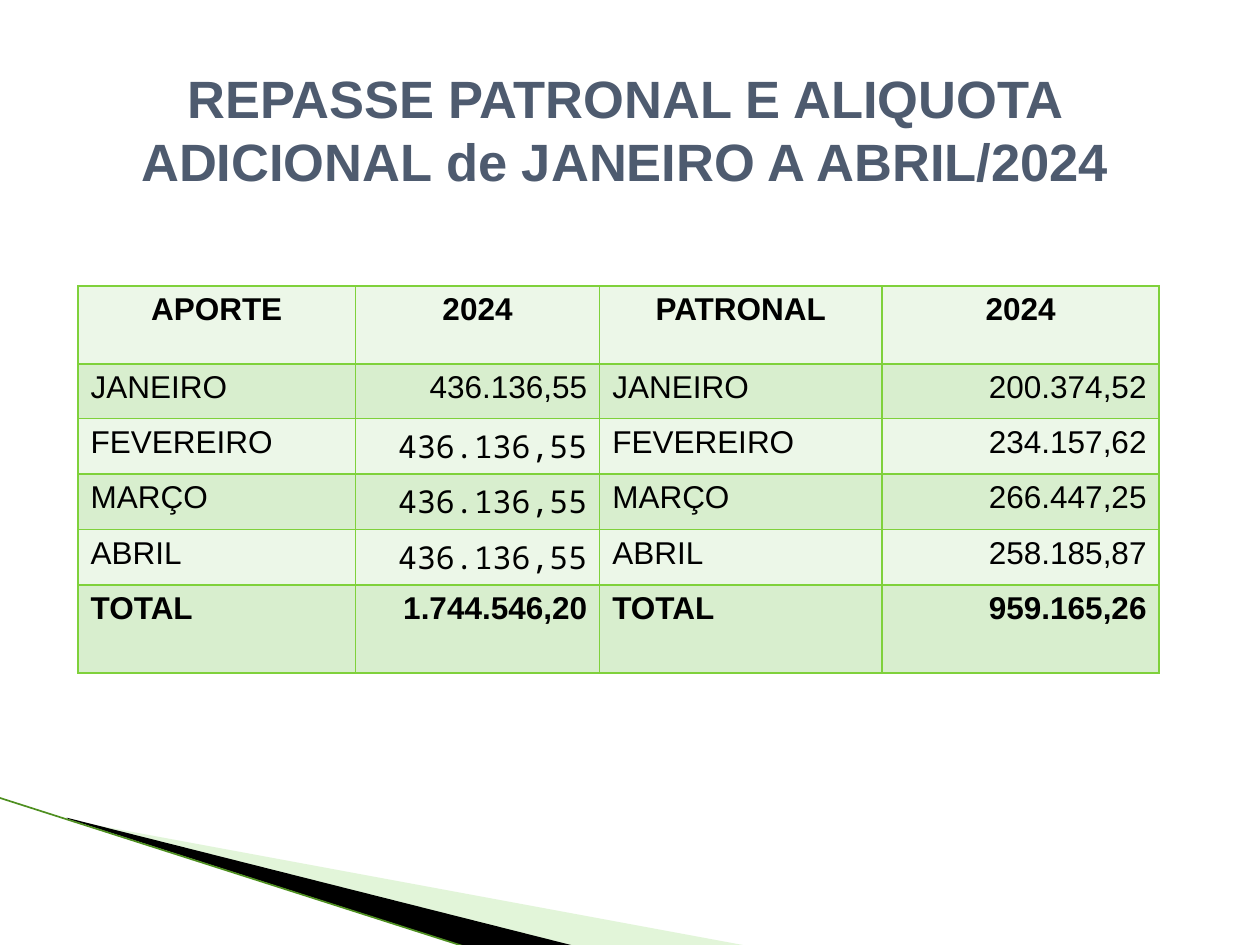
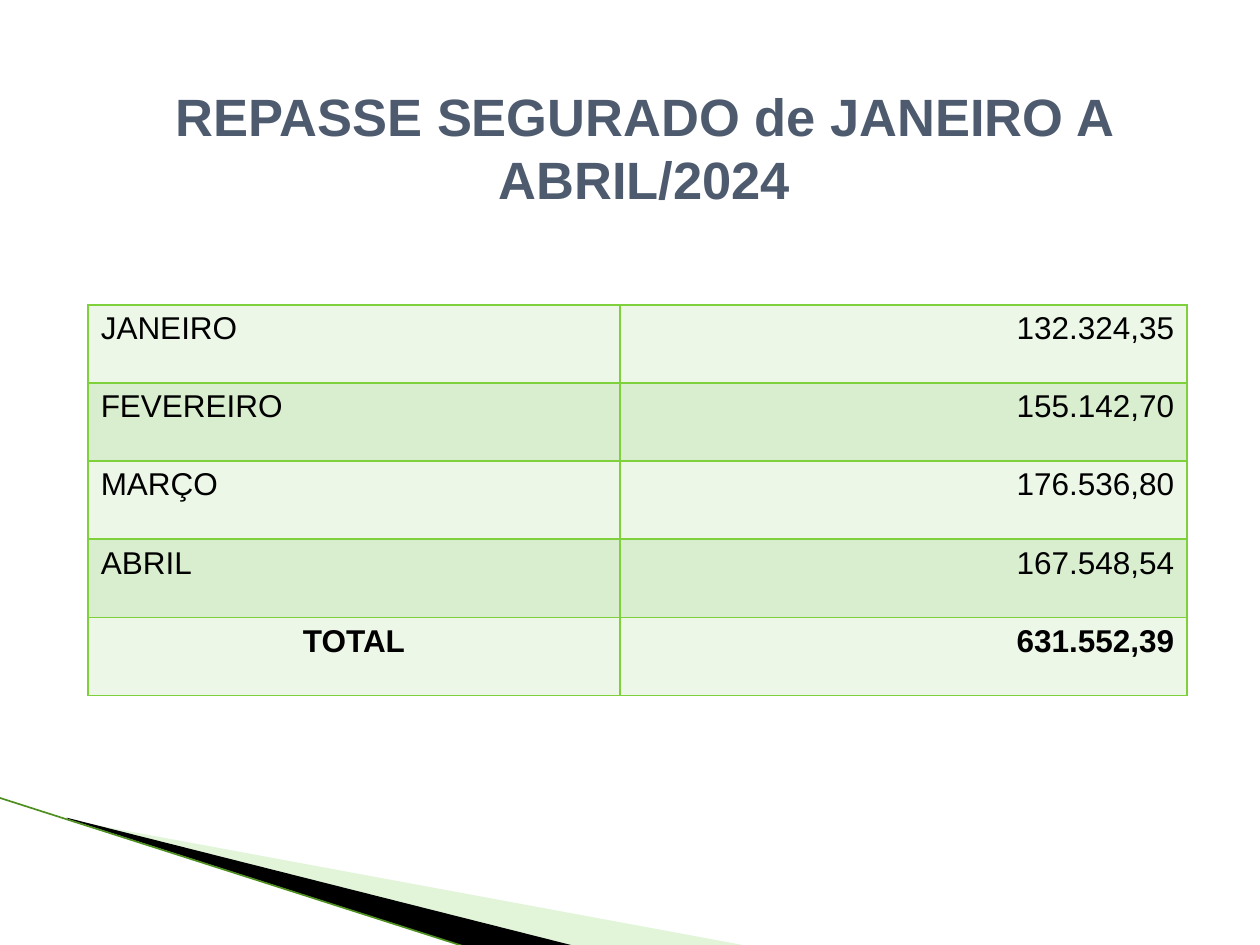
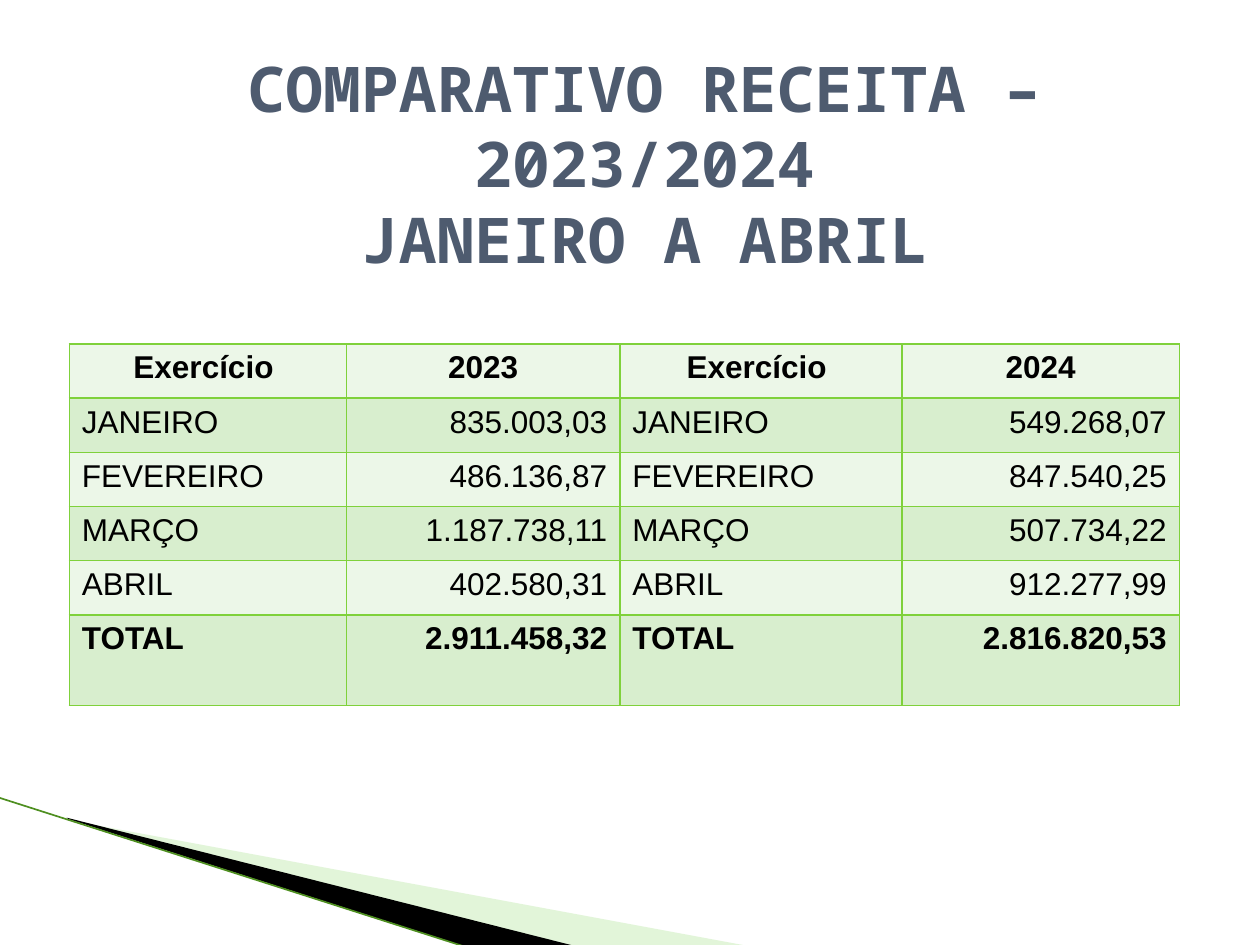
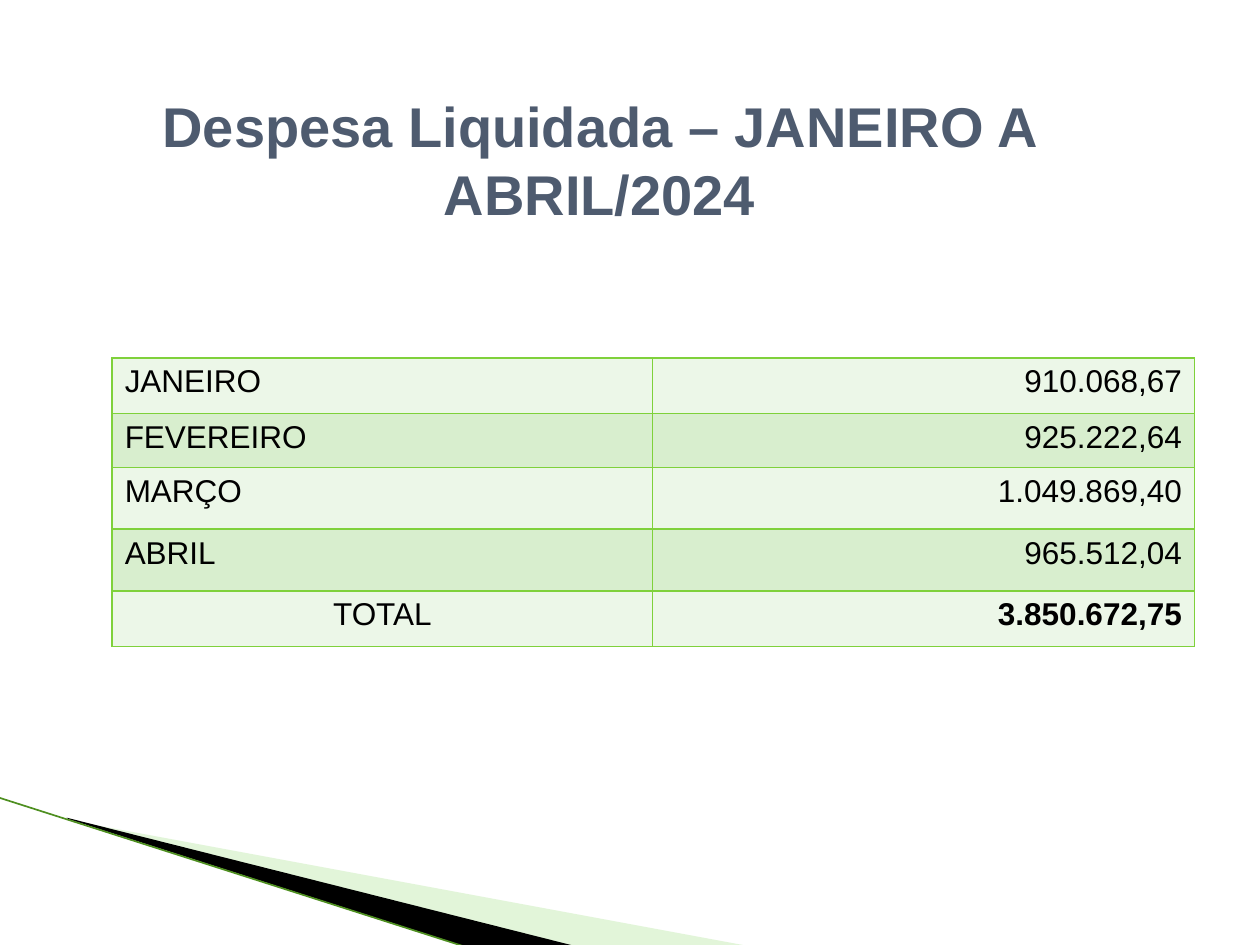
import dataclasses

import lxml.etree
import pptx
import pptx.dml.color
import pptx.enum.shapes
import pptx.enum.text
import pptx.oxml.ns
import pptx.util

Inches = pptx.util.Inches
Pt = pptx.util.Pt
qn = pptx.oxml.ns.qn
Align = pptx.enum.text.PP_ALIGN
Anchor = pptx.enum.text.MSO_ANCHOR


@dataclasses.dataclass(frozen=True)
class Theme:
    sans: str = "Arial"
    mono: str = "Noto Sans Mono"
    title: str = "4E5B6F"
    ink: str = "000000"
    rule: str = "7FD13B"
    bands: tuple = ("ECF7E8", "D8EECE")
    pale: str = "B8E7A1"
    edge: str = "4E8F20"
    title_size: int = 30
    cell_size: int = 18
    rule_width: float = 1
    edge_width: float = 0.95


THEME = Theme()
MONTHS = ["JANEIRO", "FEVEREIRO", "MARÇO", "ABRIL"]
NAMES = MONTHS + ["TOTAL"]


def rgb(code):
    return pptx.dml.color.RGBColor.from_string(code)


def add_run(para, text, size, color, font=THEME.sans, bold=False):
    run = para.add_run()
    run.text = text
    run.font.name = font
    run.font.size = Pt(size)
    run.font.bold = bold
    run.font.color.rgb = rgb(color)


def add_wedge(slide, points, color, alpha=None):
    """Draw a filled outline; alpha is its opacity in percent."""
    start, *rest = [(Inches(x), Inches(y)) for x, y in points]
    pen = slide.shapes.build_freeform(*start)
    pen.add_line_segments(rest)
    wedge = pen.convert_to_shape()
    wedge.shadow.inherit = False
    wedge.line.fill.background()
    wedge.fill.solid()
    wedge.fill.fore_color.rgb = rgb(color)
    if alpha is not None:
        tint = next(wedge.element.spPr.iter(qn("a:srgbClr")))
        lxml.etree.SubElement(tint, qn("a:alpha"), val=str(alpha * 1000))
    return wedge


def add_edge(slide, start, end):
    edge = slide.shapes.add_connector(
        pptx.enum.shapes.MSO_CONNECTOR.STRAIGHT,
        *[Inches(n) for n in (*start, *end)])
    edge.line.color.rgb = rgb(THEME.edge)
    edge.line.width = Pt(THEME.edge_width)
    lxml.etree.SubElement(edge.element.spPr, qn("a:effectLst"))
    return edge


def add_corner(slide, layout):
    """Draw the corner wedges and move them to the shared layout."""
    parts = [
        add_wedge(slide, [(0.55, 6.51), (5.95, 7.51), (4.56, 7.51), (0.55, 6.5)],
                  THEME.pale, 40),
        add_wedge(slide, [(0.53, 6.49), (4.57, 7.51), (3.72, 7.52), (0.54, 6.5)],
                  THEME.ink),
        add_edge(slide, (-0.01, 6.33), (3.71, 7.52)),
    ]
    for part in parts:
        layout.shapes.element.append(part.element)


def set_title(slide, box, lines, size=THEME.title_size, font=THEME.sans,
              anchor=Anchor.TOP):
    title = slide.shapes.title
    title.left, title.top, title.width, title.height = map(Inches, box)
    frame = title.text_frame
    frame.word_wrap = True
    frame.auto_size = pptx.enum.text.MSO_AUTO_SIZE.NONE
    frame.vertical_anchor = anchor
    para = frame.paragraphs[0]
    para.alignment = Align.CENTER
    for i, line in enumerate(lines):
        if i:
            para.add_line_break()
        add_run(para, line, size, THEME.title, font, True)


def add_border(cell):
    props = cell._tc.get_or_add_tcPr()
    for side in ("lnL", "lnR", "lnT", "lnB"):
        line = lxml.etree.SubElement(props, qn("a:" + side),
                                     w=str(Pt(THEME.rule_width)))
        fill = lxml.etree.SubElement(line, qn("a:solidFill"))
        lxml.etree.SubElement(fill, qn("a:srgbClr"), val=THEME.rule)


def add_grid(slide, corner, widths, heights, rows, head=False, plain=(), mono=()):
    """Add a table of name and value columns that ends in a total row.

    plain and mono hold the (row, column) places of cells that are
    not bold or are set in the monospaced font.
    """
    frame = slide.shapes.add_table(
        len(rows), len(widths), *map(Inches, corner),
        Inches(sum(widths)), Inches(sum(heights)))
    grid = frame.table
    grid.first_row = grid.horz_banding = False
    for col, width in zip(grid.columns, widths):
        col.width = Inches(width)
    for row, height in zip(grid.rows, heights):
        row.height = Inches(height)

    last = len(rows) - 1
    for r, texts in enumerate(rows):
        top = head and r == 0
        for c, text in enumerate(texts):
            cell = grid.cell(r, c)
            add_border(cell)
            cell.fill.solid()
            cell.fill.fore_color.rgb = rgb(THEME.bands[r % 2])
            para = cell.text_frame.paragraphs[0]
            if top or (r == last and c == 0 and not head):
                para.alignment = Align.CENTER
            else:
                para.alignment = Align.RIGHT if c % 2 else Align.LEFT
            add_run(para, text, THEME.cell_size, THEME.ink,
                    THEME.mono if (r, c) in mono else THEME.sans,
                    (top or r == last) and (r, c) not in plain)


def pair_rows(head, left, right):
    """Set two lists of values side by side, each next to its names."""
    return [head, *zip(NAMES, left, NAMES, right)]


def main():
    deck = pptx.Presentation()
    deck.slide_width, deck.slide_height = Inches(10), Inches(7.5)
    layout = deck.slide_layouts[5]
    share, insured, income, spend = [
        deck.slides.add_slide(layout) for _ in range(4)]
    add_corner(share, layout)

    set_title(share, (0.86, 0.47, 8.2, 1.11),
              ["REPASSE PATRONAL E ALIQUOTA ADICIONAL de JANEIRO A ABRIL/2024"])
    add_grid(share, (0.62, 2.27), [2.2, 1.94, 2.24, 2.2],
             [0.62] + [0.43] * 4 + [0.7],
             pair_rows(["APORTE", "2024", "PATRONAL", "2024"],
                       ["436.136,55"] * 4 + ["1.744.546,20"],
                       ["200.374,52", "234.157,62", "266.447,25",
                        "258.185,87", "959.165,26"]),
             head=True, mono=[(r, 1) for r in (2, 3, 4)])

    set_title(insured, (0.7, 0.62, 8.83, 1.11),
              ["REPASSE SEGURADO de JANEIRO A ABRIL/2024"])
    add_grid(insured, (0.7, 2.42), [4.22, 4.5], [0.62] * 5,
             list(zip(NAMES, ["132.324,35", "155.142,70", "176.536,80",
                              "167.548,54", "631.552,39"])))

    set_title(income, (1.14, 0.39, 7.95, 1.8),
              ["COMPARATIVO RECEITA – 2023/2024", "JANEIRO A ABRIL"],
              36, THEME.mono, Anchor.MIDDLE)
    add_grid(income, (0.55, 2.73), [2.2, 2.17, 2.24, 2.2],
             [0.43] * 5 + [0.72],
             pair_rows(["Exercício ", "2023", "Exercício ", "2024"],
                       ["835.003,03", "486.136,87", "1.187.738,11",
                        "402.580,31", "2.911.458,32"],
                       ["549.268,07", "847.540,25", "507.734,22",
                        "912.277,99", "2.816.820,53"]),
             head=True)

    set_title(spend, (0.51, 0.68, 8.5, 1.61),
              ["Despesa Liquidada – JANEIRO A ABRIL/2024"], 32)
    add_grid(spend, (0.89, 2.84), [4.29, 4.3], [0.44, 0.43, 0.49, 0.49, 0.44],
             list(zip(NAMES, ["910.068,67", "925.222,64", "1.049.869,40",
                              "965.512,04", "3.850.672,75"])),
             plain=[(4, 0)])

    deck.save("out.pptx")


if __name__ == "__main__":
    main()
